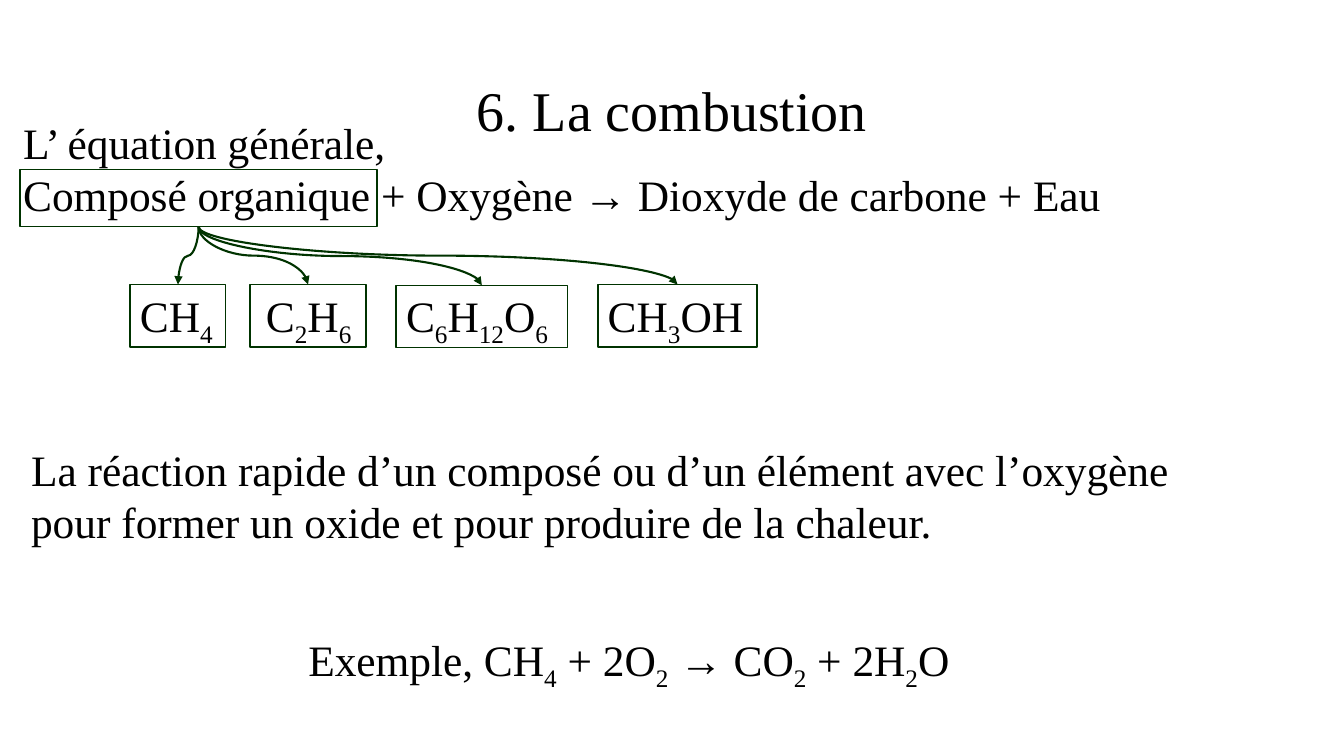
"""Build the slide on combustion: general equation, sample compounds, definition and example."""
from lxml.etree import SubElement
from pptx import Presentation
from pptx.dml.color import RGBColor
from pptx.enum.shapes import MSO_CONNECTOR, MSO_SHAPE
from pptx.enum.text import MSO_ANCHOR, MSO_AUTO_SIZE, PP_ALIGN
from pptx.oxml.ns import qn
from pptx.util import Pt

BLACK = RGBColor(0x00, 0x00, 0x00)
WHITE = RGBColor(0xFF, 0xFF, 0xFF)
GREEN = RGBColor(0x00, 0x33, 0x00)
FONT = "Times New Roman"

presentation = Presentation()
presentation.slide_width = Pt(960)
presentation.slide_height = Pt(540)
slide = presentation.slides.add_slide(presentation.slide_layouts[6])


def add_text(left, top, width, height, lines, size=31, wrap=False):
    """Add a text box; in each line, every second part between underscores is a subscript."""
    box = slide.shapes.add_textbox(Pt(left), Pt(top), Pt(width), Pt(height))
    frame = box.text_frame
    frame.word_wrap = wrap
    frame.auto_size = MSO_AUTO_SIZE.SHAPE_TO_FIT_TEXT
    for index, line in enumerate(lines):
        paragraph = frame.paragraphs[0] if index == 0 else frame.add_paragraph()
        for position, part in enumerate(line.split("_")):
            if not part:
                continue
            run = paragraph.add_run()
            run.text = part
            run.font.name = FONT
            run.font.size = Pt(size)
            run.font.color.rgb = BLACK
            if position % 2:
                run._r.get_or_add_rPr().set("baseline", "-25000")
    return frame


def add_frame(left, top, width, height):
    """Add a white rectangle with a thin green outline."""
    shape = slide.shapes.add_shape(MSO_SHAPE.RECTANGLE, Pt(left), Pt(top), Pt(width), Pt(height))
    shape.shadow.inherit = False
    shape.fill.solid()
    shape.fill.fore_color.rgb = WHITE
    shape.line.color.rgb = GREEN
    shape.line.width = Pt(1)


compound_left, compound_top, compound_width, compound_height = 14.4, 121, 254.9, 41
add_frame(compound_left, compound_top, compound_width, compound_height)

title = add_text(66, 28.8, 828, 104.4, ["6. La combustion"], size=40, wrap=True)
title.auto_size = MSO_AUTO_SIZE.NONE
title.vertical_anchor = MSO_ANCHOR.MIDDLE
title.paragraphs[0].alignment = PP_ALIGN.CENTER
title.paragraphs[0].line_spacing = 0.9

add_text(15.1, 313.2, 879.1, 82.1, [
    "La réaction rapide d’un composé ou d’un élément avec l’oxygène "
    "pour former un oxide et pour produire de la chaleur.",
], wrap=True)
add_text(9.4, 79.2, 792.7, 82.1, [
    "L’ équation générale,",
    "Composé organique + Oxygène → Dioxyde de carbone + Eau",
])
add_text(213.1, 448.6, 483.1, 44.6, ["Exemple, CH_4_ + 2O_2_ → CO_2_ + 2H_2_O"])

formula_top, formula_height = 203.2, 44.6
start_x = compound_left + compound_width / 2
start_y = compound_top + compound_height
formulas = [
    ("CH_4", 92.9, 68.4, 0, 0),
    ("C_2_H_6", 178.6, 82.8, 4.3, 0),
    ("C_6_H_12_O_6", 283, 122.4, 0, 0.6),
    ("CH_3_OH", 427, 113.8, 0, 0),
]
for formula, left, width, indent, drop in formulas:
    frame_top = formula_top + drop
    add_frame(left, frame_top, width, formula_height)
    add_text(left + indent, formula_top, width - indent, formula_height, [formula])

    end_x = left + width / 2
    run_x, run_y = abs(end_x - start_x), frame_top - start_y
    box_left = (start_x + end_x - run_y) / 2
    box_top = (start_y + frame_top - run_x) / 2
    arrow = slide.shapes.add_connector(
        MSO_CONNECTOR.CURVE, Pt(box_left), Pt(box_top), Pt(box_left + run_y), Pt(box_top + run_x))
    arrow.line.color.rgb = GREEN
    arrow.line.width = Pt(1.5)
    properties = arrow._element.spPr
    transform = properties.find(qn("a:xfrm"))
    if end_x < start_x:
        transform.set("rot", "5400000")
    else:
        transform.set("rot", "16200000")
        transform.set("flipH", "1")
    SubElement(properties.find(qn("a:ln")), qn("a:tailEnd"), type="triangle")
    SubElement(properties, qn("a:effectLst"))

presentation.save("out.pptx")
